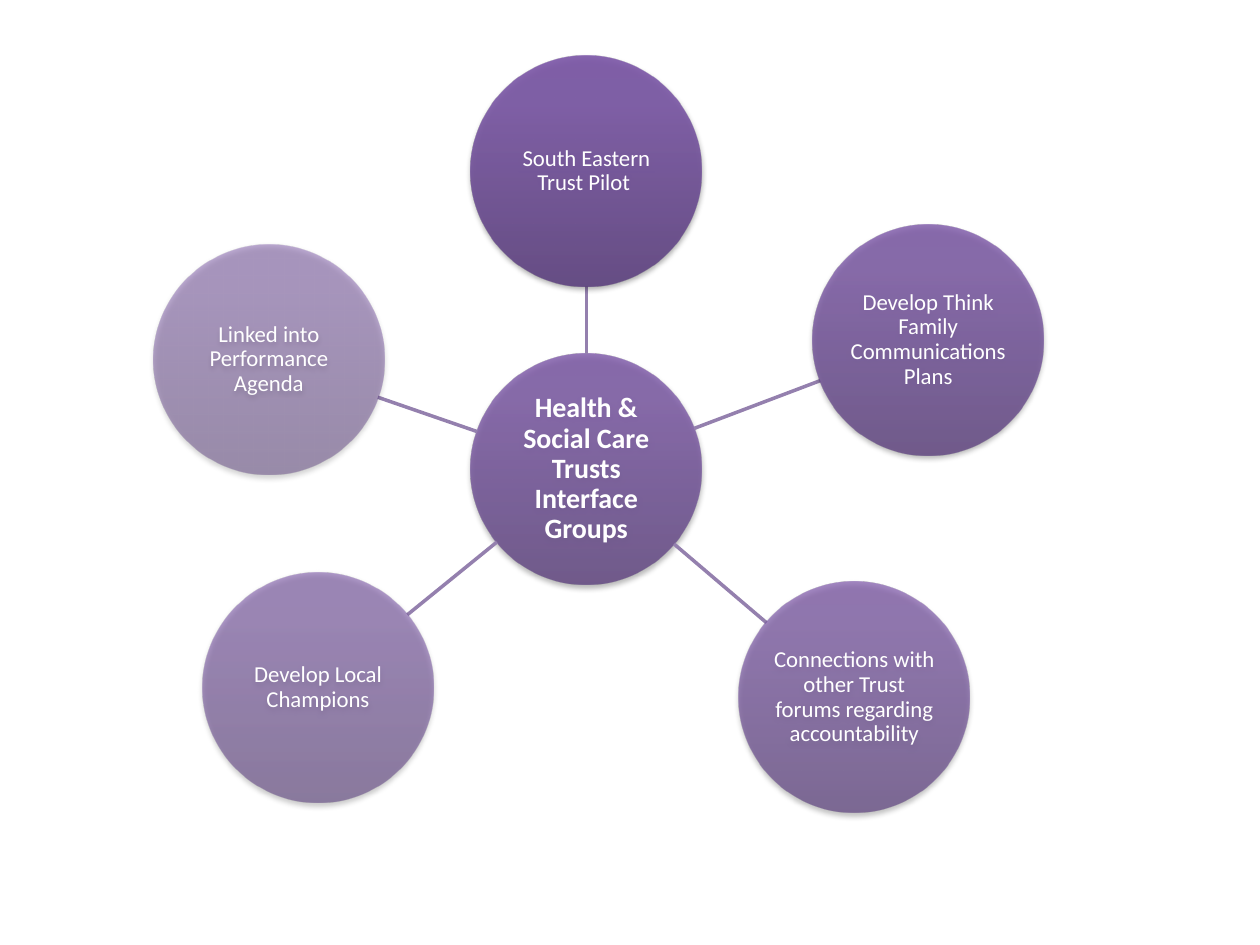
import math
from dataclasses import dataclass

import pptx
import pptx.dml.color
import pptx.enum.shapes
import pptx.enum.text
import pptx.oxml
import pptx.oxml.ns
import pptx.util

Cm = pptx.util.Cm
Pt = pptx.util.Pt
RGB = pptx.dml.color.RGBColor.from_string
NS = pptx.oxml.ns.nsdecls("a")

COLORS = {
    "dark": "5F4480",
    "mid": "7B58A6",
    "light": "7C57A8",
    "line": "9480AE",
    "text": "FFFFFF",
    "shadow": "000000",
}
STOPS = ((0, "dark"), (80, "mid"), (100, "light"))
SIZE = 4.65  # diameter of every circle, cm
FRAME = {
    "word_wrap": True,
    "vertical_anchor": pptx.enum.text.MSO_ANCHOR.MIDDLE,
    "margin_left": Cm(0.03),
    "margin_right": Cm(0.03),
    "margin_top": Cm(0.03),
    "margin_bottom": Cm(0.03),
}
PARA = {"alignment": pptx.enum.text.PP_ALIGN.CENTER, "line_spacing": 0.9}


@dataclass(frozen=True)
class Node:
    """A circle, given by its centre in cm and its opacity in percent."""
    text: str
    x: float
    y: float
    alpha: int
    size: int = 13
    bold: bool = False


HUB = Node("Health & Social Care Trusts Interface Groups", 11.82, 9.46, 80, 16, True)
NODES = (
    Node("South Eastern Trust Pilot ", 11.82, 3.45, 90),
    Node("Develop Think Family Communications Plans", 18.71, 6.85, 80),
    Node("Connections with other Trust forums regarding accountability", 17.22, 14.06, 70),
    Node("Develop Local Champions", 6.41, 13.86, 60),
    Node("Linked into Performance Agenda", 5.42, 7.25, 50),
)


def apply(target: object, values: dict) -> None:
    for name, value in values.items():
        setattr(target, name, value)


def tint(name: str, alpha: int) -> str:
    return f'<a:srgbClr val="{COLORS[name]}"><a:alpha val="{alpha * 1000}"/></a:srgbClr>'


def shade(shape, alpha: int) -> None:
    """Give the shape its see-through gradient and soft drop shadow."""
    props = shape._element.spPr
    shape.fill.background()
    stops = "".join(f'<a:gs pos="{pos * 1000}">{tint(name, alpha)}</a:gs>' for pos, name in STOPS)
    blend = pptx.oxml.parse_xml(
        f'<a:gradFill {NS} rotWithShape="1"><a:gsLst>{stops}</a:gsLst>'
        '<a:lin ang="16200000" scaled="0"/></a:gradFill>'
    )
    props.replace(props.find(pptx.oxml.ns.qn("a:noFill")), blend)
    shape.line.fill.background()
    shape.shadow.inherit = False
    props.find(pptx.oxml.ns.qn("a:effectLst")).append(pptx.oxml.parse_xml(
        f'<a:outerShdw {NS} blurRad="{Pt(3.1)}" dist="{Pt(1.8)}" dir="5400000" rotWithShape="0">'
        f'{tint("shadow", 35)}</a:outerShdw>'
    ))


def draw_node(slide, node: Node) -> None:
    shape = slide.shapes.add_shape(
        pptx.enum.shapes.MSO_SHAPE.OVAL,
        Cm(node.x - SIZE / 2), Cm(node.y - SIZE / 2), Cm(SIZE), Cm(SIZE),
    )
    shade(shape, node.alpha)
    frame = shape.text_frame
    apply(frame, FRAME)
    para = frame.paragraphs[0]
    apply(para, PARA)
    run = para.add_run()
    run.text = node.text
    apply(run.font, {"name": "Calibri", "size": Pt(node.size), "bold": node.bold})
    run.font.color.rgb = RGB(COLORS["text"])


def draw_spoke(slide, hub: Node, node: Node) -> None:
    """Join two circles from rim to rim."""
    angle = math.atan2(node.y - hub.y, node.x - hub.x)
    dx, dy = SIZE / 2 * math.cos(angle), SIZE / 2 * math.sin(angle)
    line = slide.shapes.add_connector(
        pptx.enum.shapes.MSO_CONNECTOR.STRAIGHT,
        Cm(hub.x + dx), Cm(hub.y + dy), Cm(node.x - dx), Cm(node.y - dy),
    )
    line.line.color.rgb = RGB(COLORS["line"])
    line.line.width = Pt(2)
    line._element.spPr.append(pptx.oxml.parse_xml(f"<a:effectLst {NS}/>"))


def main() -> None:
    deck = pptx.Presentation()
    apply(deck, {"slide_width": Cm(25.4), "slide_height": Cm(19.05)})
    slide = deck.slides.add_slide(deck.slide_layouts[6])
    draw_node(slide, HUB)
    for node in NODES:
        draw_spoke(slide, HUB, node)
        draw_node(slide, node)
    deck.save("out.pptx")


if __name__ == "__main__":
    main()
